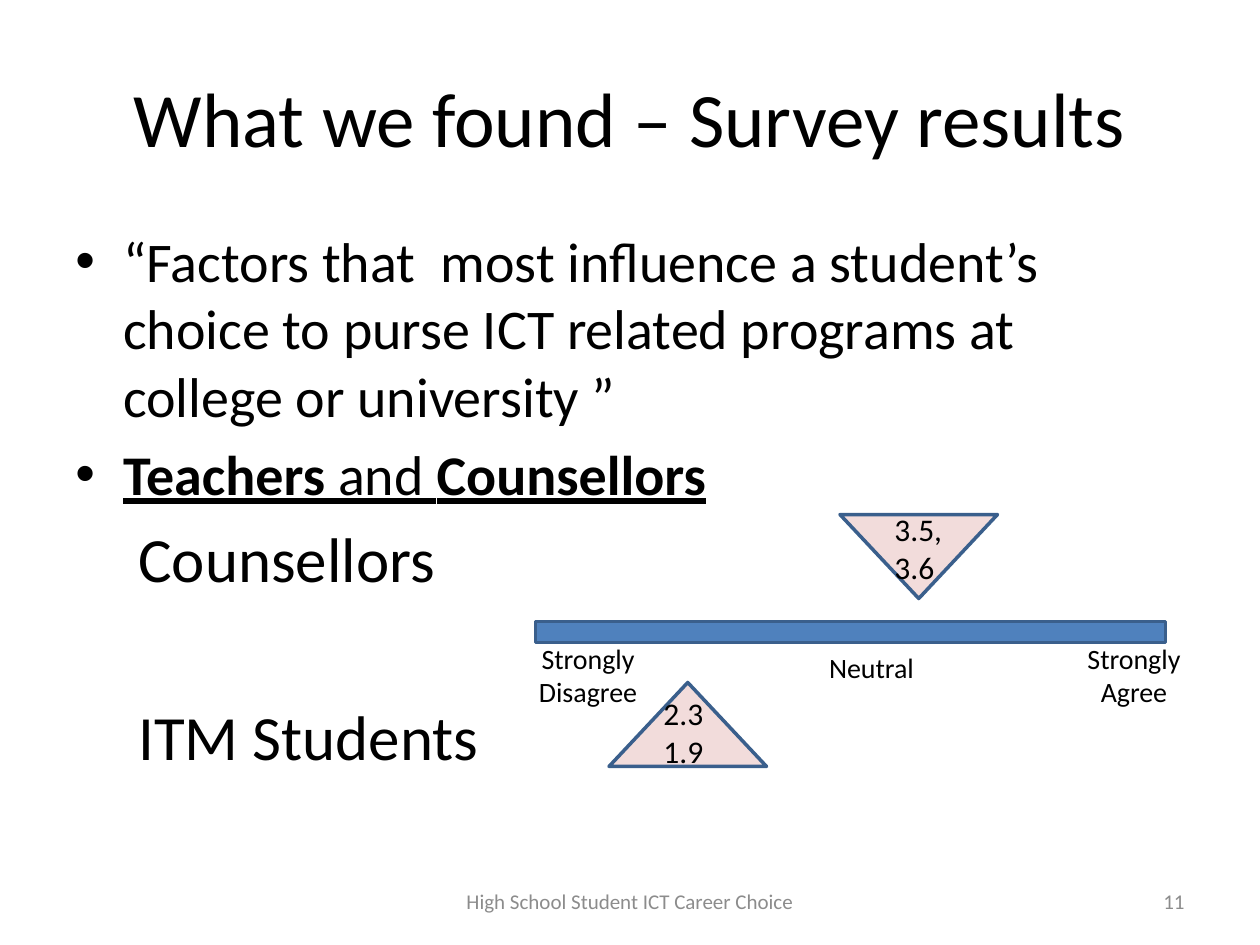
from lxml.etree import SubElement
from pptx import Presentation
from pptx.dml.color import RGBColor
from pptx.enum.shapes import MSO_SHAPE as SHAPE
from pptx.enum.text import MSO_ANCHOR as ANCHOR, MSO_AUTO_SIZE as AUTO, PP_ALIGN as ALIGN
from pptx.oxml.ns import qn
from pptx.util import Inches, Pt


def rgb(value):
    return RGBColor.from_string(value)


class Deck:
    font, ink, grey = "Calibri", "000000", "8C8C8C"
    blue, edge, pink = "4F81BD", "3A5F8C", "F2DCDB"
    columns, rows = 120, 90

    def __init__(self):
        self.prs = Presentation()
        self.prs.slide_width, self.prs.slide_height = Inches(10), Inches(7.5)
        self.s = self.prs.slides.add_slide(self.prs.slide_layouts[5])

    def box(self, left, top, width, height):
        dx = self.prs.slide_width / self.columns
        dy = self.prs.slide_height / self.rows
        return [round(v) for v in (left * dx, top * dy, width * dx, height * dy)]

    def format(self, r, size, color=None, bold=False, underline=False):
        f = r.font
        f.name, f.size, f.bold, f.underline = self.font, Pt(size), bold, underline
        f.color.rgb = rgb(color or self.ink)

    def title(self, text, *at):
        sp = self.s.shapes.title
        sp.left, sp.top, sp.width, sp.height = self.box(*at)
        tf = sp.text_frame
        tf.text, tf.vertical_anchor = text, ANCHOR.MIDDLE
        p = tf.paragraphs[0]
        p.alignment = ALIGN.CENTER
        self.format(p.runs[0], 44)

    def text(self, text, at, size, align=ALIGN.LEFT, color=None, anchor=ANCHOR.TOP, auto=AUTO.NONE):
        tf = self.s.shapes.add_textbox(*self.box(*at)).text_frame
        tf.word_wrap, tf.auto_size, tf.vertical_anchor = True, auto, anchor
        tf.text = text
        for p in tf.paragraphs:
            p.alignment = align
            for r in p.runs:
                self.format(r, size, color)

    def label(self, text, *at):
        self.text(text, at, 16, ALIGN.CENTER, auto=AUTO.SHAPE_TO_FIT_TEXT)

    def score(self, text, *at):
        self.text(text, at, 18, auto=AUTO.SHAPE_TO_FIT_TEXT)

    def footer(self, text, align, left, width):
        self.text(text, (left, 83.4, width, 4.8), 12, align, self.grey, ANCHOR.MIDDLE)

    def shape(self, kind, fill, *at, rotation=0):
        sp = self.s.shapes.add_shape(kind, *self.box(*at))
        sp.shadow.inherit = False
        sp.rotation = rotation
        sp.fill.solid()
        sp.fill.fore_color.rgb = rgb(fill)
        sp.line.color.rgb, sp.line.width = rgb(self.edge), Pt(2)

    def body(self, items, *at):
        tf = self.s.shapes.add_textbox(*self.box(*at)).text_frame
        tf.word_wrap = True
        for i, (runs, size, before, bullet) in enumerate(items):
            p = tf.paragraphs[0] if i == 0 else tf.add_paragraph()
            p.space_before = Pt(before)
            margin, indent = (0.38, -0.38) if bullet else (0.81, -0.31)
            pPr = p._p.get_or_add_pPr()
            pPr.set("marL", str(Inches(margin)))
            pPr.set("indent", str(Inches(indent)))
            if bullet:
                SubElement(pPr, qn("a:buFont"), typeface="Arial")
                SubElement(pPr, qn("a:buChar"), char="•")
            else:
                SubElement(pPr, qn("a:buNone"))
            for text, bold, underline in runs:
                r = p.add_run()
                r.text = text
                self.format(r, size, bold=bold, underline=underline)


def main():
    deck = Deck()
    deck.title("What we found – Survey results", 6, 3.6, 108, 15)
    question = ("“Factors that  most influence a student’s choice to purse "
                "ICT related programs at college or university ”")
    groups = [("Teachers ", True, True), ("and ", False, True), ("Counsellors", True, True)]
    deck.body([
        ([(question, False, False)], 32, 6.4, True),
        (groups, 32, 6.4, True),
        ([("Counsellors", False, False)], 36, 7.2, False),
        ([("ITM Students", False, False)], 36, 58.3, False),
    ], 6, 21, 108, 59.4)

    deck.footer("11", ALIGN.RIGHT, 86, 28)
    deck.footer("High School Student ICT Career Choice", ALIGN.CENTER, 41, 38)

    deck.shape(SHAPE.RECTANGLE, deck.blue, 51, 59.2, 60, 2)
    deck.label("Strongly Disagree", 49, 60.5, 14, 7.7)
    deck.label("Strongly Agree", 101, 60.5, 14, 7.7)
    deck.label("Neutral", 76, 61.4, 14, 4.4)

    deck.shape(SHAPE.ISOSCELES_TRIANGLE, deck.pink, 58, 65, 15, 8)
    deck.shape(SHAPE.ISOSCELES_TRIANGLE, deck.pink, 80, 49, 15, 8, rotation=180)
    deck.score("3.5, 3.6", 84, 48, 8, 8.5)
    deck.score("2.3\n1.9", 62, 65.5, 8, 8.5)
    deck.prs.save("out.pptx")


if __name__ == "__main__":
    main()
